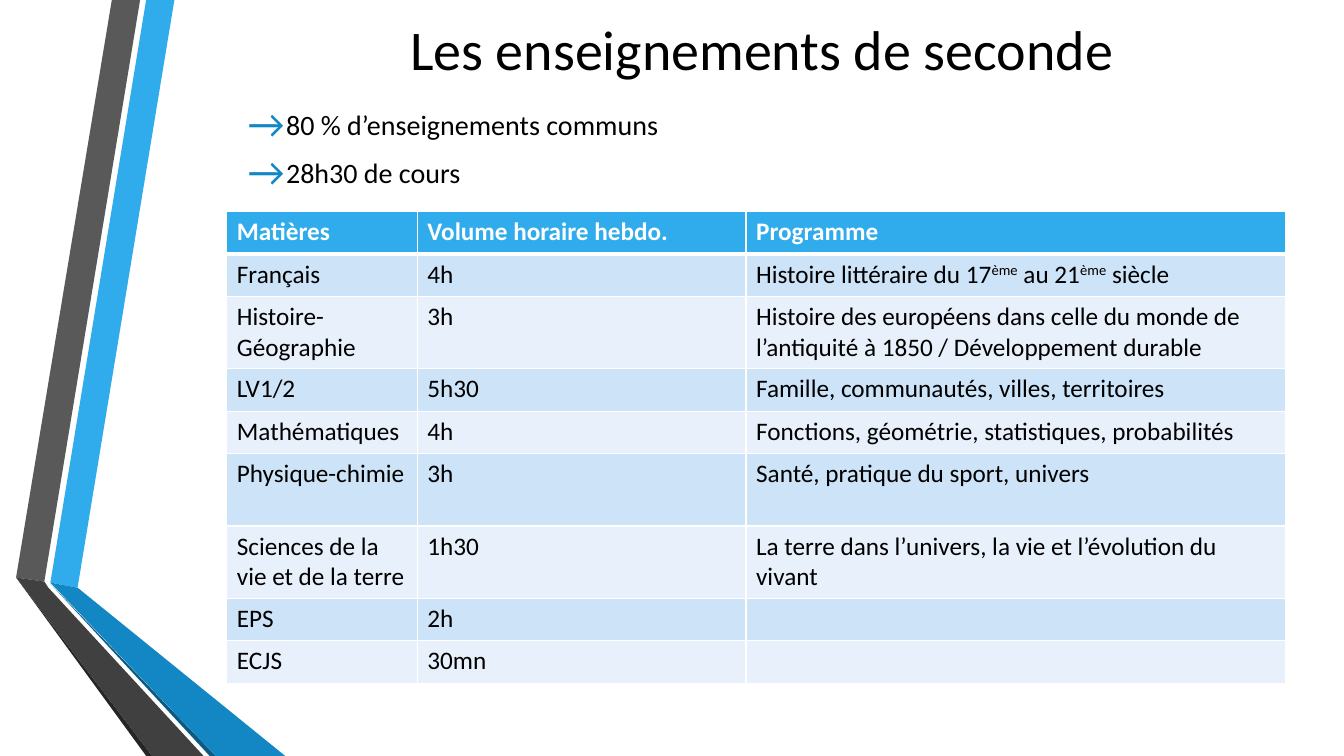
import pptx
import pptx.dml.color
import pptx.enum.text
import pptx.util
import pptx.oxml
import pptx.oxml.ns

PX = 9144  # 100 px to the inch

BLUE, BLACK, WHITE = "30ACEC", "000000", "FFFFFF"
BANDS = ("CDE3F8", "E8F1FB")

RIBBONS = [
    (BLUE, [(50, 578), (77, 583), (173, 0), (145, 0)]),
    ("595959", [(139, 0), (111, 0), (16, 573), (44, 577)]),
    ("262626", [(16, 573), (145, 750), (151, 750)]),
    ("0C5A82", [(50, 579), (208, 750), (214, 750)]),
    ("1287C3", [(50, 578), (214, 750), (283, 750), (77, 583)]),
    ("404040", [(202, 750), (48, 583), (44, 577), (16, 573), (151, 750)]),
]

POINTS = ["80 % d’enseignements communs", "28h30 de cours"]

COLS = [189, 326, 535]
# Row height, then the cells; text between ^ marks is raised.
ROWS = [
    (42, "Matières", "Volume horaire hebdo.", "Programme"),
    (42, "Français", "4h", "Histoire littéraire du 17^ème^ au 21^ème^ siècle"),
    (72, "Histoire-Géographie", "3h",
     "Histoire des européens dans celle du monde de l’antiquité à 1850 / "
     "Développement durable"),
    (42, "LV1/2", "5h30", "Famille, communautés, villes, territoires"),
    (42, "Mathématiques", "4h",
     "Fonctions, géométrie, statistiques, probabilités"),
    (72, "Physique-chimie", "3h", "Santé, pratique du sport, univers"),
    (72, "Sciences de la vie et de la terre", "1h30",
     "La terre dans l’univers, la vie et l’évolution du vivant"),
    (42, "EPS", "2h", ""),
    (42, "ECJS", "30mn", ""),
]


def px(*nums):
    return [pptx.util.Emu(n * PX) for n in nums]


def rgb(code):
    return pptx.dml.color.RGBColor.from_string(code)


def paint(shape, color):
    shape.fill.solid()
    shape.fill.fore_color.rgb = rgb(color)


def format(item, values):
    for name, value in values.items():
        setattr(item, name, value)


def write(para, text, size, color=BLACK, bold=False):
    """Add text to a paragraph, raising the parts between ^ marks."""
    for i, part in enumerate(text.split("^")):
        run = para.add_run()
        run.text = part
        format(run.font, {"name": "Calibri", "bold": bold,
                          "size": pptx.util.Pt(size)})
        run.font.color.rgb = rgb(color)
        if i % 2:
            run.font._element.set("baseline", "30000")


def ribbon(slide, color, points):
    pen = slide.shapes.build_freeform(*points[0], scale=PX)
    pen.add_line_segments(points[1:], close=True)
    shape = pen.convert_to_shape()
    paint(shape, color)
    shape.line.fill.background()
    shape.shadow.inherit = False


def title(slide, text):
    shape = slide.shapes.title
    left, top, width, height = px(151, -4, 963, 90)
    format(shape, {"left": left, "top": top, "width": width, "height": height})
    frame = shape.text_frame
    format(frame, {"word_wrap": True,
                   "auto_size": pptx.enum.text.MSO_AUTO_SIZE.NONE,
                   "vertical_anchor": pptx.enum.text.MSO_ANCHOR.BOTTOM})
    para = frame.paragraphs[0]
    para.alignment = pptx.enum.text.PP_ALIGN.RIGHT
    write(para, text, 40)


def bullet(para, sign, color, size):
    props = para._p.get_or_add_pPr()
    indent = 38 * PX
    props.set("marL", str(indent))
    props.set("indent", str(-indent))
    space = pptx.oxml.ns.nsdecls("a")
    for xml in (f'<a:buClr {space}><a:srgbClr val="{color}"/></a:buClr>',
                f'<a:buSzPct {space} val="{size * 1000}"/>',
                f'<a:buFont {space} typeface="Calibri"/>',
                f'<a:buChar {space} char="{sign}"/>'):
        props.append(pptx.oxml.parse_xml(xml))


def bullets(slide, items):
    frame = slide.shapes.add_textbox(*px(236, 102, 1040, 105)).text_frame
    frame.word_wrap = True
    for i, text in enumerate(items):
        para = frame.add_paragraph() if i else frame.paragraphs[0]
        format(para, {"space_before": pptx.util.Pt(4),
                      "space_after": pptx.util.Pt(6)})
        bullet(para, "→", "1287C3", 145)
        write(para, text, 20)


def border(cell, base):
    """Draw white cell borders, with the bottom one base points wide."""
    props = cell._tc.get_or_add_tcPr()
    space = pptx.oxml.ns.nsdecls("a")
    for side, width in zip("LRTB", (1, 1, 1, base)):
        props.append(pptx.oxml.parse_xml(
            f'<a:ln{side} {space} w="{width * 12700}"><a:solidFill>'
            f'<a:srgbClr val="{WHITE}"/></a:solidFill></a:ln{side}>'))


def table(slide, rows, cols):
    box = px(225, 210, sum(cols), sum(row[0] for row in rows))
    grid = slide.shapes.add_table(len(rows), len(cols), *box).table
    for col, width in zip(grid.columns, px(*cols)):
        col.width = width
    for r, (height, *texts) in enumerate(rows):
        grid.rows[r].height = px(height)[0]
        head = r == 0
        for c, text in enumerate(texts):
            cell = grid.cell(r, c)
            border(cell, 3 if head else 1)
            paint(cell, BLUE if head else BANDS[(r - 1) % 2])
            if text:
                write(cell.text_frame.paragraphs[0], text, 18,
                      WHITE if head else BLACK, head)


def main():
    deck = pptx.Presentation()
    deck.slide_width, deck.slide_height = px(1333, 750)
    slide = deck.slides.add_slide(deck.slide_layouts[5])
    for color, points in RIBBONS:
        ribbon(slide, color, points)
    title(slide, "Les enseignements de seconde")
    bullets(slide, POINTS)
    table(slide, ROWS, COLS)
    deck.save("out.pptx")


if __name__ == "__main__":
    main()
